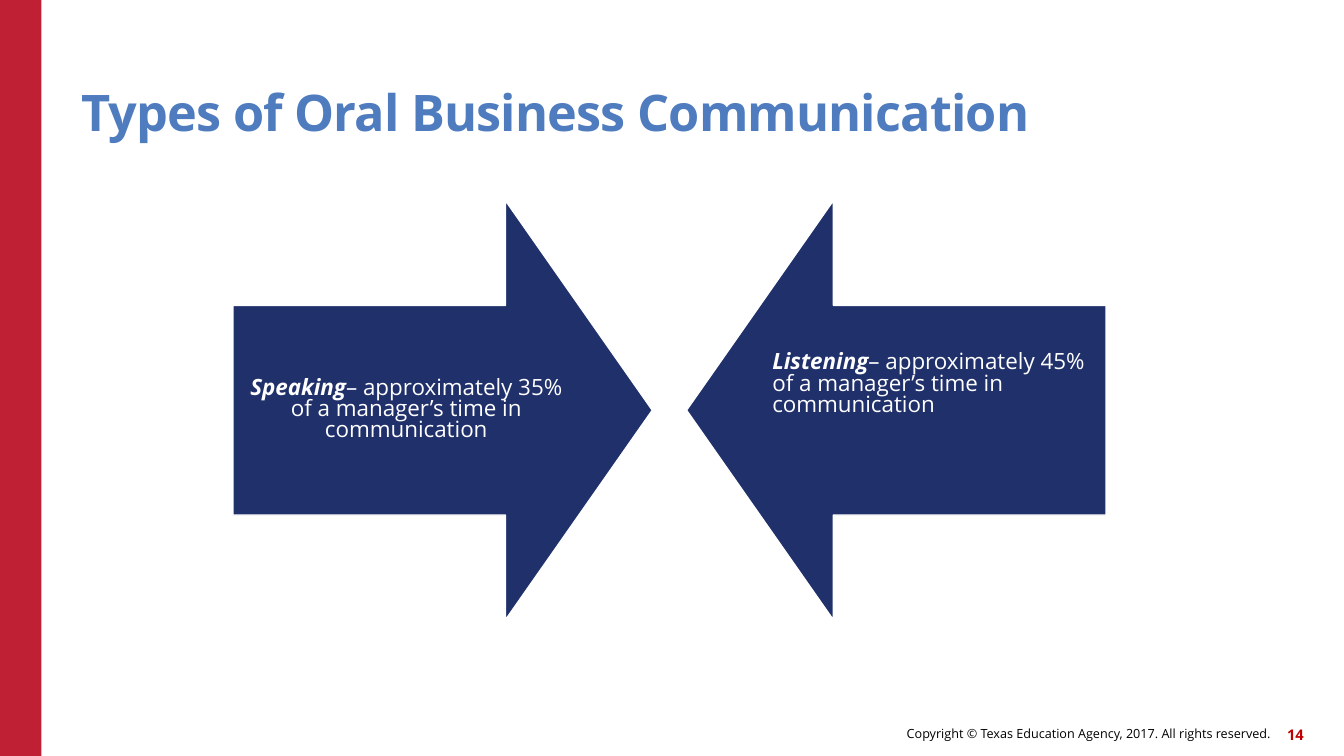
"""Build the slide on types of oral business communication."""
from dataclasses import dataclass

from pptx import Presentation
from pptx.dml.color import RGBColor as RGB
from pptx.enum.shapes import MSO_SHAPE as Shape
from pptx.enum.text import MSO_ANCHOR as Anchor, PP_ALIGN as Align
from pptx.util import Inches, Pt


@dataclass(frozen=True)
class Theme:
    """Colours, font and type sizes of the slide."""
    font: str = "Open Sans"
    red: RGB = RGB(0xC0, 0x20, 0x33)
    number: RGB = RGB(0xC0, 0x00, 0x00)
    blue: RGB = RGB(0x4E, 0x7C, 0xBE)
    navy: RGB = RGB(0x20, 0x30, 0x6A)
    white: RGB = RGB(0xFF, 0xFF, 0xFF)
    black: RGB = RGB(0x00, 0x00, 0x00)
    title_size: float = 36
    body_size: float = 16
    number_size: float = 10.5
    copyright_size: float = 9


THEME = Theme()
ARROW_SIDE = 4.16
ARROW_TOP = 1.99
LABEL_WIDTH = 3.44
LABEL_INSET = 0.12


def add_block(slide, kind, box, fill, outline=None):
    """Add a filled preset shape, outlined if a colour is given."""
    block = slide.shapes.add_shape(kind, *map(Inches, box))
    block.shadow.inherit = False
    block.fill.solid()
    block.fill.fore_color.rgb = fill
    if outline is None:
        block.line.fill.background()
    else:
        block.line.color.rgb = outline
        block.line.width = Pt(1)
    return block


def add_text(slide, box, runs, size, color, align=Align.LEFT,
             anchor=Anchor.MIDDLE, insets=(0, 0, 0, 0), spacing=1.0):
    """Add a one-paragraph text box from (text, font formats) pairs."""
    frame = slide.shapes.add_textbox(*map(Inches, box)).text_frame
    left, top, right, bottom = map(Inches, insets)
    formats = {"word_wrap": True, "vertical_anchor": anchor,
               "margin_left": left, "margin_top": top,
               "margin_right": right, "margin_bottom": bottom}
    for name, value in formats.items():
        setattr(frame, name, value)
    paragraph = frame.paragraphs[0]
    paragraph.alignment = align
    paragraph.line_spacing = spacing
    for text, emphasis in runs:
        run = paragraph.add_run()
        run.text = text
        run.font.color.rgb = color
        for name, value in {"name": THEME.font, "size": Pt(size), **emphasis}.items():
            setattr(run.font, name, value)
    return paragraph


def add_title(slide, text):
    """Add the slightly condensed slide title."""
    title = add_text(slide, (0.81, 0.45, 11, 0.96), [(text, {"bold": True})],
                     THEME.title_size, THEME.blue, anchor=Anchor.BOTTOM, spacing=0.9)
    title.runs[0].font._element.set("spc", "-60")


def add_arrow(slide, kind, left, label_left, term, share, **layout):
    """Add an arrow with the share of time that its term takes."""
    arrow = add_block(slide, kind, (left, ARROW_TOP, ARROW_SIDE, ARROW_SIDE),
                      THEME.navy, THEME.white)
    arrow.adjustments[0] = 0.5
    arrow.adjustments[1] = 0.35
    shaft = ARROW_SIDE / 2
    add_text(slide, (label_left, ARROW_TOP + shaft / 2, LABEL_WIDTH, shaft),
             [(term, {"bold": True, "italic": True}),
              (f"– approximately {share}% of a manager’s time in communication", {})],
             THEME.body_size, THEME.white, spacing=0.79, **layout)


def add_footer(slide):
    """Add the copyright line and the slide number."""
    add_text(slide, (6.14, 7.12, 6.46, 0.32),
             [("Copyright © Texas Education Agency, 2017. All rights reserved.", {})],
             THEME.copyright_size, THEME.black, Align.RIGHT)
    add_text(slide, (12.51, 7.13, 0.42, 0.32), [("14", {"bold": True})],
             THEME.number_size, THEME.number, Align.RIGHT)


def main():
    """Build and save the slide."""
    deck = Presentation()
    deck.slide_width, deck.slide_height = Inches(13.33), Inches(7.5)
    slide = deck.slides.add_slide(deck.slide_layouts[6])
    add_block(slide, Shape.RECTANGLE, (0, 0, 0.41, 7.5), THEME.red)
    add_footer(slide)
    add_title(slide, "Types of Oral Business Communication")
    add_arrow(slide, Shape.RIGHT_ARROW, 2.31, 2.31, "Speaking", 35,
              align=Align.CENTER, insets=(LABEL_INSET,) * 4)
    add_arrow(slide, Shape.LEFT_ARROW, 6.81, 7.54, "Listening", 45,
              anchor=Anchor.TOP, insets=(LABEL_INSET, 0.47, LABEL_INSET, LABEL_INSET))
    deck.save("out.pptx")


if __name__ == "__main__":
    main()
